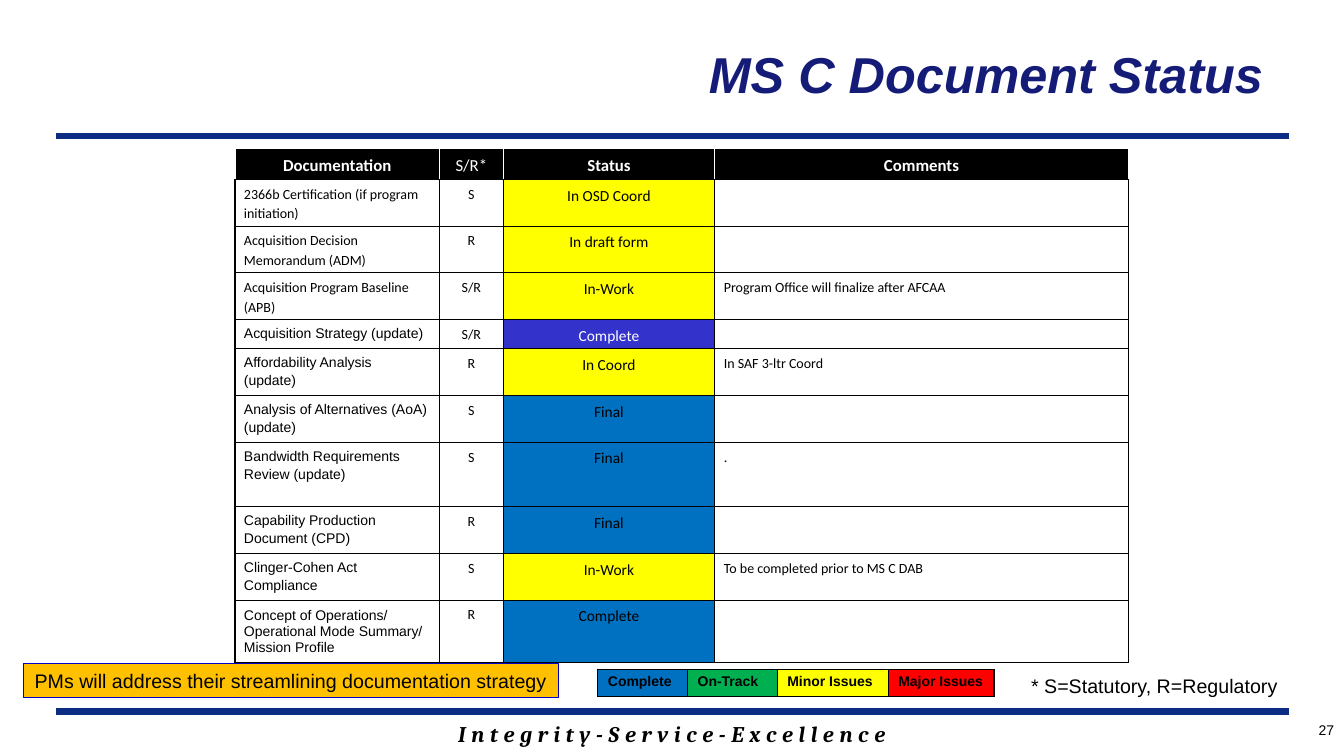
from dataclasses import dataclass

from lxml import etree
from pptx import Presentation, util as u
from pptx.dml.color import RGBColor
from pptx.enum import shapes, text
from pptx.oxml import ns

BLACK, WHITE, NAVY = "000000", "FFFFFF", "0C2D83"
YELLOW, BLUE, VIOLET = "FFFF00", "0070C0", "3333CC"
LEFT, CENTER, RIGHT = text.PP_ALIGN.LEFT, text.PP_ALIGN.CENTER, text.PP_ALIGN.RIGHT


@dataclass
class Document:
    name: str
    authority: str
    status: str
    color: str
    height: float
    comment: str = ""
    name_font: str = "Arial"


@dataclass
class LegendKey:
    label: str
    color: str
    width: float


DOCUMENTS = [
    Document("2366b Certification (if program initiation)", "S", "In OSD Coord", YELLOW, 0.46, name_font="Calibri"),
    Document("Acquisition Decision Memorandum (ADM)", "R", "In draft form", YELLOW, 0.46, name_font="Calibri"),
    Document("Acquisition Program Baseline (APB)", "S/R", "In-Work", YELLOW, 0.46,
             "Program Office will finalize after AFCAA", "Calibri"),
    Document("Acquisition Strategy (update)", "S/R", "Complete", VIOLET, 0.28),
    Document("Affordability Analysis\t(update)", "R", "In Coord", YELLOW, 0.45, "In SAF 3-ltr Coord"),
    Document("Analysis of Alternatives (AoA) (update)", "S", "Final", BLUE, 0.45),
    Document("Bandwidth Requirements Review (update)", "S", "Final", BLUE, 0.64, "."),
    Document("Capability Production Document (CPD)", "R", "Final", BLUE, 0.45),
    Document("Clinger-Cohen Act Compliance", "S", "In-Work", YELLOW, 0.45, "To be completed prior to MS C DAB"),
    Document("Concept of Operations/ Operational Mode Summary/ Mission Profile", "R", "Complete", BLUE, 0.58),
]
LEGEND = [
    LegendKey("Complete", BLUE, 0.89),
    LegendKey("On-Track", "00B050", 0.89),
    LegendKey("Minor Issues", YELLOW, 1.1),
    LegendKey("Major Issues", "FF0000", 1.05),
]
HEADINGS = ["Documentation", "S/R*", "Status", "Comments"]
COLUMN_WIDTHS = [2.03, 0.63, 2.1, 4.1]
HEADER_HEIGHT = 0.3


def rgb(color: str) -> RGBColor:
    return RGBColor.from_string(color)


def write(tf, content: str, *, size: float, font: str = "Arial", color: str = BLACK, bold: bool = False,
          italic: bool = False, align=LEFT, spacing: float | None = None, tracking: int = 0) -> None:
    p = tf.paragraphs[0]
    p.alignment = align
    if spacing:
        p.line_spacing = spacing
    if not content:
        end = etree.SubElement(p._p, ns.qn("a:endParaRPr"))
        end.set("sz", str(int(size * 100)))
        return
    r = p.add_run()
    r.text = content
    f = r.font
    f.size, f.name, f.bold, f.italic = u.Pt(size), font, bold, italic
    f.color.rgb = rgb(color)
    if tracking:
        r._r.get_or_add_rPr().set("spc", str(tracking))


def add_text(s, x: float, y: float, w: float, h: float, content: str, *, wrap: bool = True, **fmt) -> None:
    tf = s.shapes.add_textbox(u.Inches(x), u.Inches(y), u.Inches(w), u.Inches(h)).text_frame
    tf.word_wrap = wrap
    write(tf, content, **fmt)


def add_rule(s, y: float) -> None:
    line = s.shapes.add_connector(shapes.MSO_CONNECTOR.STRAIGHT, u.Inches(0.56), u.Inches(y),
                                  u.Inches(12.78), u.Inches(y))
    line.line.color.rgb = rgb(NAVY)
    line.line.width = u.Pt(4.5)
    etree.SubElement(line._element.spPr, ns.qn("a:effectLst"))


def set_borders(cell, sides: str, bottom: str) -> None:
    tc_pr = cell._tc.get_or_add_tcPr()
    for i, (side, color) in enumerate(zip("LRTB", [sides] * 3 + [bottom])):
        ln = etree.Element(ns.qn(f"a:ln{side}"), w=str(u.Pt(1)))
        fill = etree.SubElement(ln, ns.qn("a:solidFill"))
        etree.SubElement(fill, ns.qn("a:srgbClr"), val=color)
        tc_pr.insert(i, ln)


def fill_cell(cell, content: str, *, fill: str | None = None, margins: tuple[float, float] = (0.09, 0.04),
              sides: str = BLACK, **fmt) -> None:
    cell.margin_left = cell.margin_right = u.Inches(margins[0])
    cell.margin_top = cell.margin_bottom = u.Inches(margins[1])
    if fill:
        cell.fill.solid()
        cell.fill.fore_color.rgb = rgb(fill)
    else:
        cell.fill.background()
    set_borders(cell, sides, BLACK)
    write(cell.text_frame, content, **fmt)


def add_grid(s, x: float, y: float, widths: list[float], heights: list[float]):
    table = s.shapes.add_table(len(heights), len(widths), u.Inches(x), u.Inches(y),
                               u.Inches(sum(widths)), u.Inches(sum(heights))).table
    for column, width in zip(table.columns, widths):
        column.width = u.Inches(width)
    for row, height in zip(table.rows, heights):
        row.height = u.Inches(height)
    return table


def add_status_table(s) -> None:
    heights = [HEADER_HEIGHT] + [d.height for d in DOCUMENTS]
    table = add_grid(s, 2.33, 1.47, COLUMN_WIDTHS, heights)
    for c, heading in enumerate(HEADINGS):
        fill_cell(table.cell(0, c), heading, fill=BLACK, sides=WHITE, size=12, font="Calibri",
                  color=WHITE, bold=heading != "S/R*", align=CENTER, spacing=1.15)
    for r, d in enumerate(DOCUMENTS, 1):
        last = r == len(DOCUMENTS)
        fill_cell(table.cell(r, 0), d.name, size=10, font=d.name_font, spacing=None if last else 1.15)
        fill_cell(table.cell(r, 1), d.authority, fill=WHITE, size=10, font="Calibri", align=CENTER, spacing=1.15)
        fill_cell(table.cell(r, 2), d.status, fill=d.color, size=11, font="Calibri",
                  color=WHITE if d.color == VIOLET else BLACK, align=CENTER, spacing=1.15)
        fill_cell(table.cell(r, 3), d.comment, size=10, font="Calibri", spacing=1.15)
    table.cell(len(DOCUMENTS), 0).margin_top = u.Inches(0.08)


def add_legend(s) -> None:
    table = add_grid(s, 5.93, 6.64, [k.width for k in LEGEND], [0.27])
    for c, key in enumerate(LEGEND):
        fill_cell(table.cell(0, c), key.label, fill=key.color, margins=(0.1, 0.05), size=10, bold=True)


def add_callout(s) -> None:
    sp = s.shapes.add_shape(shapes.MSO_SHAPE.RECTANGLE, u.Inches(0.23), u.Inches(6.58),
                            u.Inches(5.31), u.Inches(0.34))
    sp.shadow.inherit = False
    sp.fill.solid()
    sp.fill.fore_color.rgb = rgb("FFC000")
    sp.line.color.rgb = rgb("0000CC")
    sp.line.width = u.Pt(0.75)
    sp.text_frame.word_wrap = False
    write(sp.text_frame, "PMs will address their streamlining documentation strategy", size=14, align=CENTER)


def add_title(s) -> None:
    title = s.shapes.title
    title.left, title.top, title.width, title.height = (u.Inches(v) for v in (4.65, 0.1, 8.12, 1.25))
    tf = title.text_frame
    tf.vertical_anchor = text.MSO_ANCHOR.MIDDLE
    tf.margin_right = u.Inches(0.24)
    write(tf, "MS C Document Status", size=36, color="151C77", bold=True, italic=True, align=RIGHT)


def main() -> None:
    prs = Presentation()
    prs.slide_width, prs.slide_height = u.Inches(13.33), u.Inches(7.5)
    s = prs.slides.add_slide(prs.slide_layouts[5])
    add_text(s, 1.89, 7.1, 9.56, 0.37, "I n t e g r i t y - S e r v i c e - E x c e l l e n c e",
             size=16, font="Cambria", bold=True, italic=True, align=CENTER, tracking=28)
    for y in (7.06, 1.35):
        add_rule(s, y)
    add_title(s)
    add_text(s, 12, 7.11, 1.33, 0.33, "27", size=10, align=RIGHT)
    add_status_table(s)
    add_legend(s)
    add_text(s, 10.12, 6.64, 2.66, 0.34, "* S=Statutory, R=Regulatory", wrap=False, size=14, align=CENTER)
    add_callout(s)
    prs.save("out.pptx")


if __name__ == "__main__":
    main()
